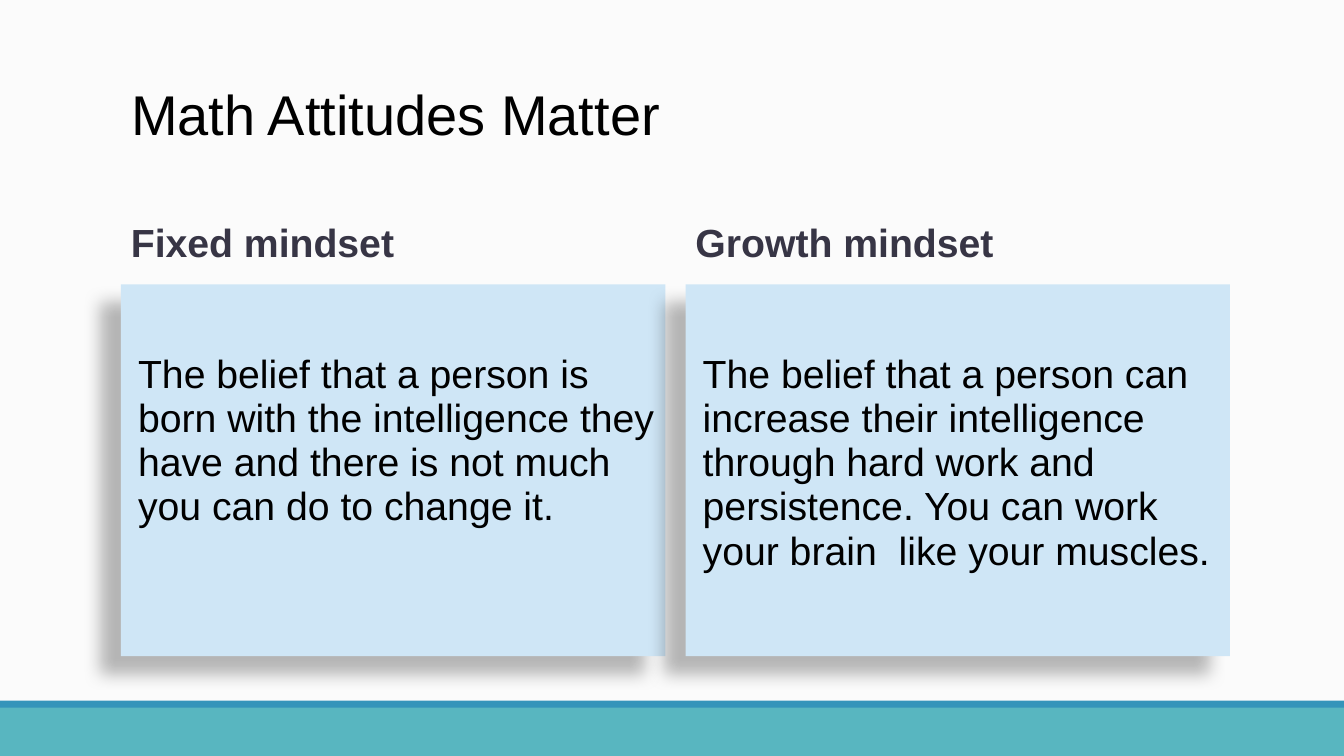
from lxml import etree
from pptx import Presentation
from pptx.dml.color import RGBColor
from pptx.enum.shapes import MSO_SHAPE
from pptx.enum.text import MSO_ANCHOR, MSO_AUTO_SIZE, PP_ALIGN
from pptx.oxml.ns import qn
from pptx.util import Inches, Pt

RECT = MSO_SHAPE.RECTANGLE
TOP, MIDDLE, BOTTOM = MSO_ANCHOR.TOP, MSO_ANCHOR.MIDDLE, MSO_ANCHOR.BOTTOM
LEFT, FIXED = PP_ALIGN.LEFT, MSO_AUTO_SIZE.NONE

TITLE = "Math Attitudes Matter"
MINDSETS = [
    ("Fixed mindset",
     "The belief that a person is born with the intelligence they have "
     "and there is not much you can do to change it."),
    ("Growth mindset",
     "The belief that a person can increase their intelligence through hard "
     "work and persistence. You can work your brain  like your muscles."),
]
BARS = [("teal", 7, 0.5), ("blue", 6.95, 0.07)]
COLORS = {"back": "FBFBFB", "teal": "58B6C0", "blue": "3494BA",
          "panel": "CFE6F6", "head": "373545", "text": "000000"}
FONT = "Arial"
WIDTH, HEIGHT = 13.33, 7.5
MARGIN, COL, GAP = 1.2, 5.4, 0.2


def color(name):
    return RGBColor.from_string(COLORS[name])


def write(shape, text, size=28, ink="text", bold=False, anchor=TOP,
          insets=(0.1, 0.05, 0.1, 0.05), spacing=0.9):
    frame = shape.text_frame
    frame.word_wrap = True
    frame.auto_size = FIXED
    frame.vertical_anchor = anchor
    (frame.margin_left, frame.margin_top,
     frame.margin_right, frame.margin_bottom) = map(Inches, insets)
    frame.text = text
    para = frame.paragraphs[0]
    para.alignment = LEFT
    para.line_spacing = spacing
    font = para.runs[0].font
    font.name, font.size, font.bold = FONT, Pt(size), bold
    font.color.rgb = color(ink)


def block(slide, fill, x, y, w, h):
    shape = slide.shapes.add_shape(RECT, Inches(x), Inches(y),
                                   Inches(w), Inches(h))
    shape.shadow.inherit = False
    shape.fill.solid()
    shape.fill.fore_color.rgb = color(fill)
    shape.line.fill.background()
    return shape


def shade(shape, blur=11.8, dist=19.7, angle=141, alpha=28):
    """Give the shape a soft outer shadow."""
    effects = shape._element.spPr.find(qn("a:effectLst"))
    outer = etree.SubElement(effects, qn("a:outerShdw"), blurRad=str(Pt(blur)),
                             dist=str(Pt(dist)), dir=str(angle * 60000),
                             algn="ctr", rotWithShape="0")
    tint = etree.SubElement(outer, qn("a:srgbClr"), val=COLORS["text"])
    etree.SubElement(tint, qn("a:alpha"), val=str(alpha * 1000))


def main():
    deck = Presentation()
    deck.slide_width, deck.slide_height = Inches(WIDTH), Inches(HEIGHT)
    slide = deck.slides.add_slide(deck.slide_layouts[5])
    slide.background.fill.solid()
    slide.background.fill.fore_color.rgb = color("back")

    for fill, y, h in BARS:
        block(slide, fill, 0, y, WIDTH, h)

    title = slide.shapes.title
    title.left, title.top = Inches(MARGIN), Inches(0.31)
    title.width, title.height = Inches(2 * COL + GAP), Inches(1.2)
    write(title, TITLE, size=40, anchor=BOTTOM, spacing=0.85)

    for i, (name, belief) in enumerate(MINDSETS):
        x = MARGIN + i * (COL + GAP)
        head = slide.shapes.add_textbox(Inches(x), Inches(2.02),
                                        Inches(COL), Inches(0.81))
        write(head, name, ink="head", bold=True, anchor=MIDDLE)
        panel = block(slide, "panel", x, 2.82, COL, 3.69)
        shade(panel)
        write(panel, belief, insets=(0.17, 0.68, 0, 0.05), spacing=0.94)

    deck.save("out.pptx")


if __name__ == "__main__":
    main()
